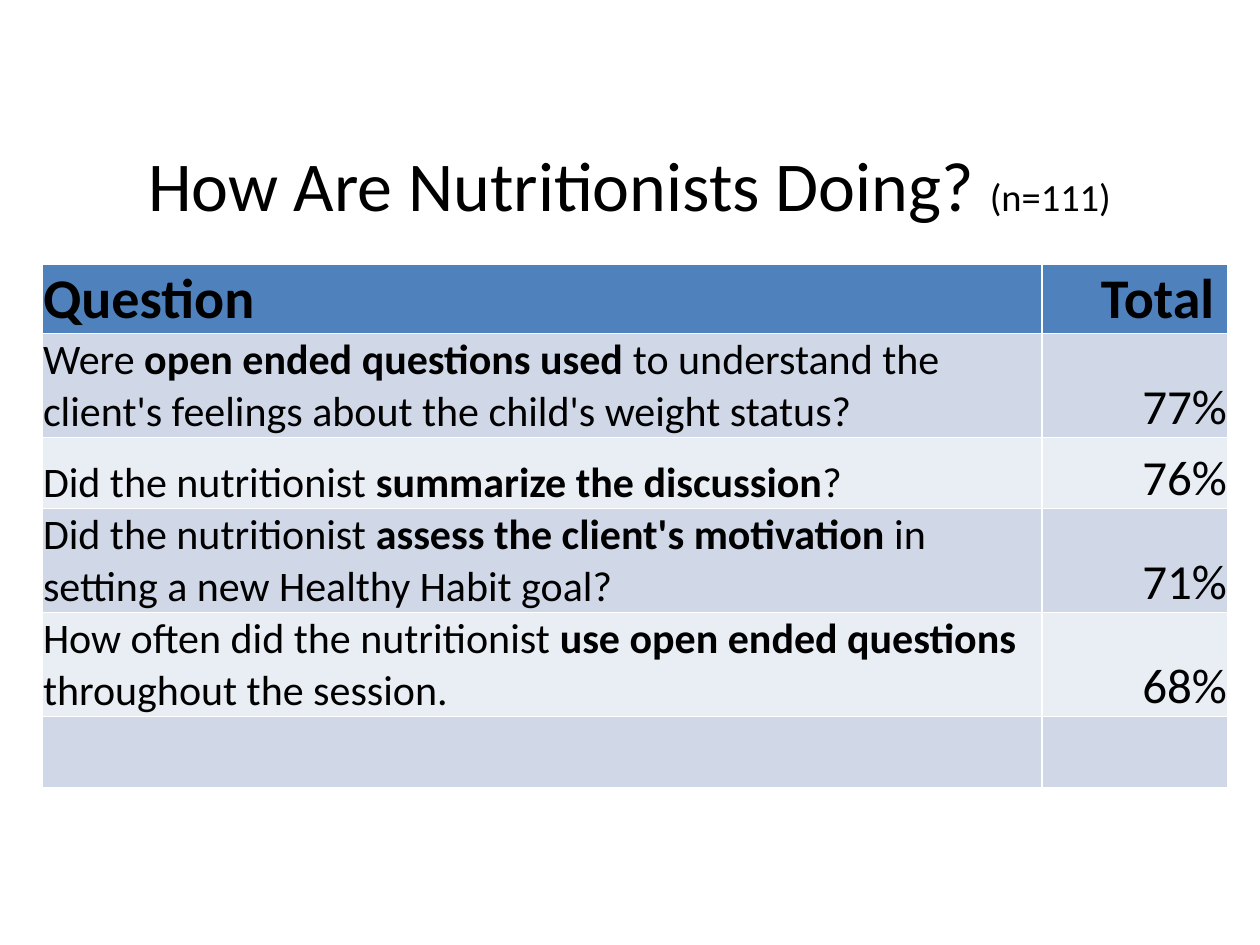
from dataclasses import dataclass

from lxml.etree import SubElement
from pptx import Presentation
from pptx.dml.color import RGBColor
from pptx.enum.text import MSO_ANCHOR, PP_ALIGN
from pptx.oxml.ns import qn
from pptx.util import Pt

PX = 914400 // 126


@dataclass(frozen=True)
class Theme:
    font: str = "Calibri"
    ink: str = "000000"
    header: str = "4F81BD"
    bands: tuple = ("D0D8E8", "E9EDF4")
    rule: str = "FFFFFF"
    title_size: int = 40
    sample_size: int = 22
    header_size: int = 32
    question_size: int = 24
    total_size: int = 28


THEME = Theme()
TITLE_BOX = (94, 105, 1071, 157)
TABLE_BOX = (42, 264, 1186, 522)
COLUMN_WIDTHS = (1000, 186)
ROW_HEIGHTS = (68, 104, 71, 104, 104, 71)

# Asterisks enclose the bold part of a question.
ANSWERS = (
    ("Were *open ended questions used* to understand the client's feelings "
     "about the child's weight status?", "77%"),
    ("Did the nutritionist *summarize the discussion*?", "76%"),
    ("Did the nutritionist *assess the client's motivation* in setting "
     "a new Healthy Habit goal?", "71%"),
    ("How often did the nutritionist *use open ended questions* "
     "throughout the session.", "68%"),
    ("", ""),
)


def scaled(box):
    return [length * PX for length in box]


def add_span(para, text, size, bold=False):
    span = para.add_run()
    span.text = text
    span.font.color.rgb = RGBColor.from_string(THEME.ink)
    for name, value in {"name": THEME.font, "size": Pt(size), "bold": bold}.items():
        setattr(span.font, name, value)


def add_title(page, box):
    title = page.shapes.title
    title.left, title.top, title.width, title.height = scaled(box)
    title.text_frame.vertical_anchor = MSO_ANCHOR.MIDDLE
    para = title.text_frame.paragraphs[0]
    para.alignment = PP_ALIGN.CENTER
    add_span(para, "How Are Nutritionists Doing? ", THEME.title_size)
    add_span(para, "(n=111)", THEME.sample_size)


def rule_cell(cell):
    """Draw thin rules on all four sides; call before filling the cell."""
    properties = cell._tc.get_or_add_tcPr()
    for side in ("a:lnL", "a:lnR", "a:lnT", "a:lnB"):
        line = SubElement(properties, qn(side), w=str(Pt(1)))
        fill = SubElement(line, qn("a:solidFill"))
        SubElement(fill, qn("a:srgbClr"), val=THEME.rule)


def fill_cell(cell, text, size, color, align, bold=False):
    rule_cell(cell)
    cell.fill.solid()
    cell.fill.fore_color.rgb = RGBColor.from_string(color)
    layout = {"margin_left": PX, "margin_right": PX, "margin_top": PX,
              "margin_bottom": 0, "vertical_anchor": MSO_ANCHOR.BOTTOM}
    for name, value in layout.items():
        setattr(cell, name, value)
    para = cell.text_frame.paragraphs[0]
    para.alignment = align
    for index, part in enumerate(text.split("*")):
        if part:
            add_span(para, part, size, bold or index % 2 == 1)


def add_answer_table(page, box):
    table = page.shapes.add_table(
        len(ROW_HEIGHTS), len(COLUMN_WIDTHS), *scaled(box)).table
    for column, width in zip(table.columns, COLUMN_WIDTHS):
        column.width = width * PX
    for row, height in zip(table.rows, ROW_HEIGHTS):
        row.height = height * PX

    aligns = (PP_ALIGN.LEFT, PP_ALIGN.RIGHT)
    for column, text in enumerate(("Question", "Total ")):
        fill_cell(table.cell(0, column), text, THEME.header_size,
                  THEME.header, aligns[column], bold=True)
    sizes = (THEME.question_size, THEME.total_size)
    for row, answer in enumerate(ANSWERS, start=1):
        band = THEME.bands[(row - 1) % 2]
        for column, text in enumerate(answer):
            fill_cell(table.cell(row, column), text, sizes[column],
                      band, aligns[column])


def main():
    deck = Presentation()
    deck.slide_width, deck.slide_height = scaled((1260, 945))
    page = deck.slides.add_slide(deck.slide_layouts.get_by_name("Title Only"))
    add_title(page, TITLE_BOX)
    add_answer_table(page, TABLE_BOX)
    deck.save("out.pptx")


if __name__ == "__main__":
    main()
